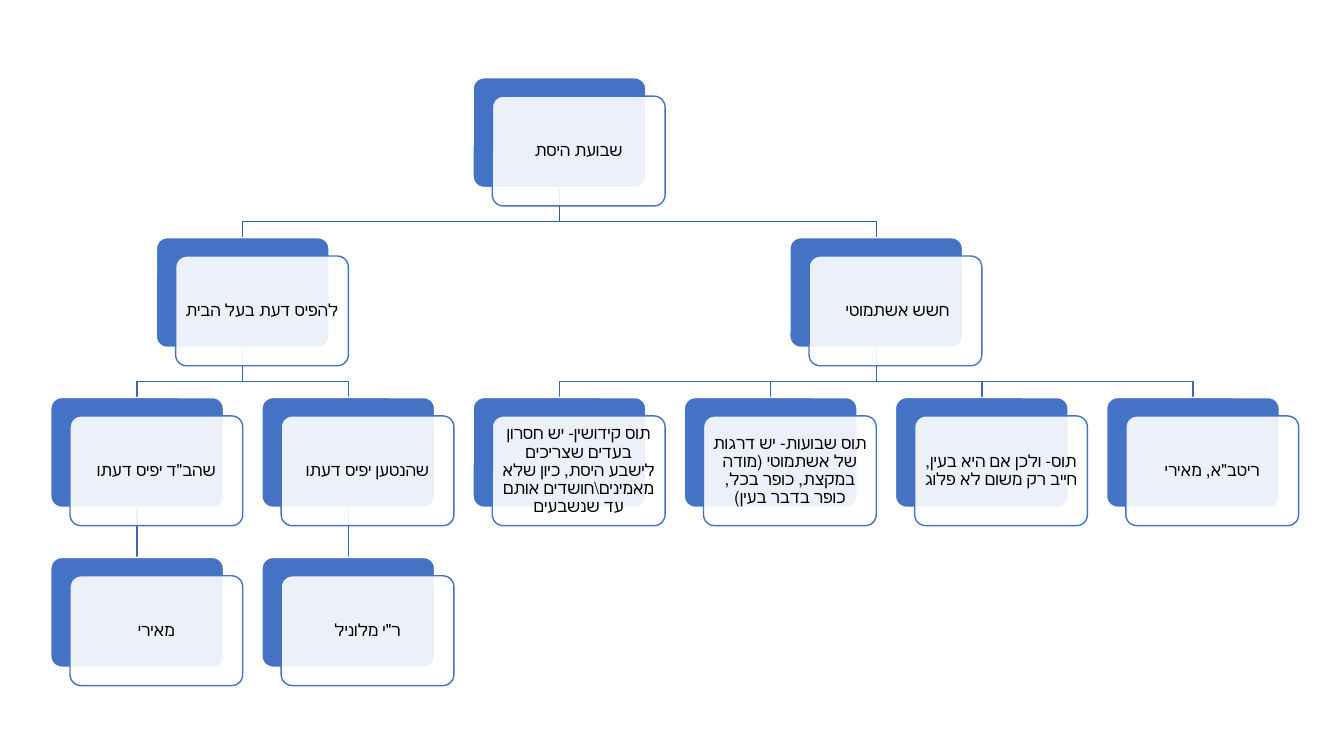
from dataclasses import dataclass, field
from itertools import count

from lxml.etree import SubElement
from pptx import Presentation
from pptx.dml.color import RGBColor
from pptx.enum.shapes import MSO_CONNECTOR, MSO_SHAPE
from pptx.enum.text import MSO_ANCHOR, PP_ALIGN
from pptx.oxml.ns import qn
from pptx.util import Pt


@dataclass(frozen=True)
class Theme:
    blue: RGBColor = RGBColor(0x44, 0x72, 0xC4)
    white: RGBColor = RGBColor(0xFF, 0xFF, 0xFF)
    black: RGBColor = RGBColor(0, 0, 0)
    root_link: RGBColor = RGBColor(0x36, 0x5B, 0x9D)
    lower_link: RGBColor = RGBColor(0x3E, 0x67, 0xB2)
    font: str = "Calibri"
    size: int = 12
    line: int = 1


THEME = Theme()
BOX_W, BOX_H = 123.4, 78.4
FIRST_CENTRE, COLUMN_STEP = 97.95, 150.84
FIRST_TOP, ROW_STEP = 55.6, 114.2
CARD_DX, CARD_DY = 13.75, 13.1
BEND_DROP = 24.4


@dataclass
class Topic:
    label: str
    children: list = field(default_factory=list)
    column: float = 0
    row: int = 0

    @property
    def centre(self):
        return FIRST_CENTRE + self.column * COLUMN_STEP

    @property
    def top(self):
        return FIRST_TOP + self.row * ROW_STEP

    @property
    def bottom(self):
        return self.top + BOX_H


TREE = Topic("שבועת היסת", [
    Topic("להפיס דעת בעל הבית", [
        Topic('שהב"ד יפיס דעתו', [Topic("מאירי")]),
        Topic("שהנטען יפיס דעתו", [Topic('ר"י מלוניל')]),
    ]),
    Topic("חשש אשתמוטי ", [
        Topic(r"תוס קידושין- יש חסרון בעדים שצריכים לישבע היסת, כיון שלא מאמינים\חושדים אותם עד שנשבעים"),
        Topic("תוס שבועות- יש דרגות של אשתמוטי (מודה במקצת, כופר בכל, כופר בדבר בעין)"),
        Topic("תוס- ולכן אם היא בעין, חייב רק משום לא פלוג"),
        Topic('ריטב"א, מאירי'),
    ]),
])


def arrange(topic, free_columns, row=0):
    """Give each leaf the next column and centre each parent over its children."""
    topic.row = row
    for child in topic.children:
        arrange(child, free_columns, row + 1)
    if topic.children:
        topic.column = (topic.children[0].column + topic.children[-1].column) / 2
    else:
        topic.column = next(free_columns)


def walk(topic):
    yield topic
    for child in topic.children:
        yield from walk(child)


def add_link(slide, parent, child):
    start = Pt(parent.centre), Pt(parent.bottom)
    end = Pt(child.centre), Pt(child.top)
    if parent.column == child.column:
        link = slide.shapes.add_connector(MSO_CONNECTOR.STRAIGHT, *start, *end)
        SubElement(link._element.spPr, qn("a:effectLst"))
    else:
        bend = Pt(parent.bottom + BEND_DROP)
        outline = slide.shapes.build_freeform(*start)
        outline.add_line_segments([(start[0], bend), (end[0], bend), end], close=False)
        link = outline.convert_to_shape()
        link.fill.background()
        link.shadow.inherit = False
    link.line.color.rgb = THEME.lower_link if parent.row else THEME.root_link
    link.line.width = Pt(THEME.line)


def add_rounded_box(slide, left, top, fill, line):
    box = slide.shapes.add_shape(
        MSO_SHAPE.ROUNDED_RECTANGLE, Pt(left), Pt(top), Pt(BOX_W), Pt(BOX_H))
    box.adjustments[0] = 0.1
    box.shadow.inherit = False
    box.fill.solid()
    box.fill.fore_color.rgb = fill
    box.line.color.rgb = line
    box.line.width = Pt(THEME.line)
    return box


def write_label(card, label):
    frame = card.text_frame
    frame.text = label
    frame.word_wrap = True
    frame.vertical_anchor = MSO_ANCHOR.MIDDLE
    frame.margin_left = frame.margin_right = Pt(3.6)
    frame.margin_top = frame.margin_bottom = Pt(3.6)
    paragraph = frame.paragraphs[0]
    paragraph.alignment = PP_ALIGN.CENTER
    paragraph.line_spacing = 0.9
    paragraph._p.get_or_add_pPr().set("rtl", "1")
    run = paragraph.runs[0]
    run.font.size = Pt(THEME.size)
    run.font.name = THEME.font
    run.font.color.rgb = THEME.black
    run._r.get_or_add_rPr().set("lang", "he-IL")


def add_topic(slide, topic):
    left = topic.centre - BOX_W / 2
    add_rounded_box(slide, left, topic.top, THEME.blue, THEME.white)
    card = add_rounded_box(
        slide, left + CARD_DX, topic.top + CARD_DY, THEME.white, THEME.blue)
    card_colour = card._element.spPr.find(qn("a:solidFill"))[0]
    SubElement(card_colour, qn("a:alpha"), val="90000")
    write_label(card, topic.label)


def main():
    deck = Presentation()
    deck.slide_width, deck.slide_height = Pt(960), Pt(540)
    slide = deck.slides.add_slide(deck.slide_layouts[6])
    arrange(TREE, count())
    for parent in walk(TREE):
        for child in parent.children:
            add_link(slide, parent, child)
    for topic in walk(TREE):
        add_topic(slide, topic)
    deck.save("out.pptx")


if __name__ == "__main__":
    main()
